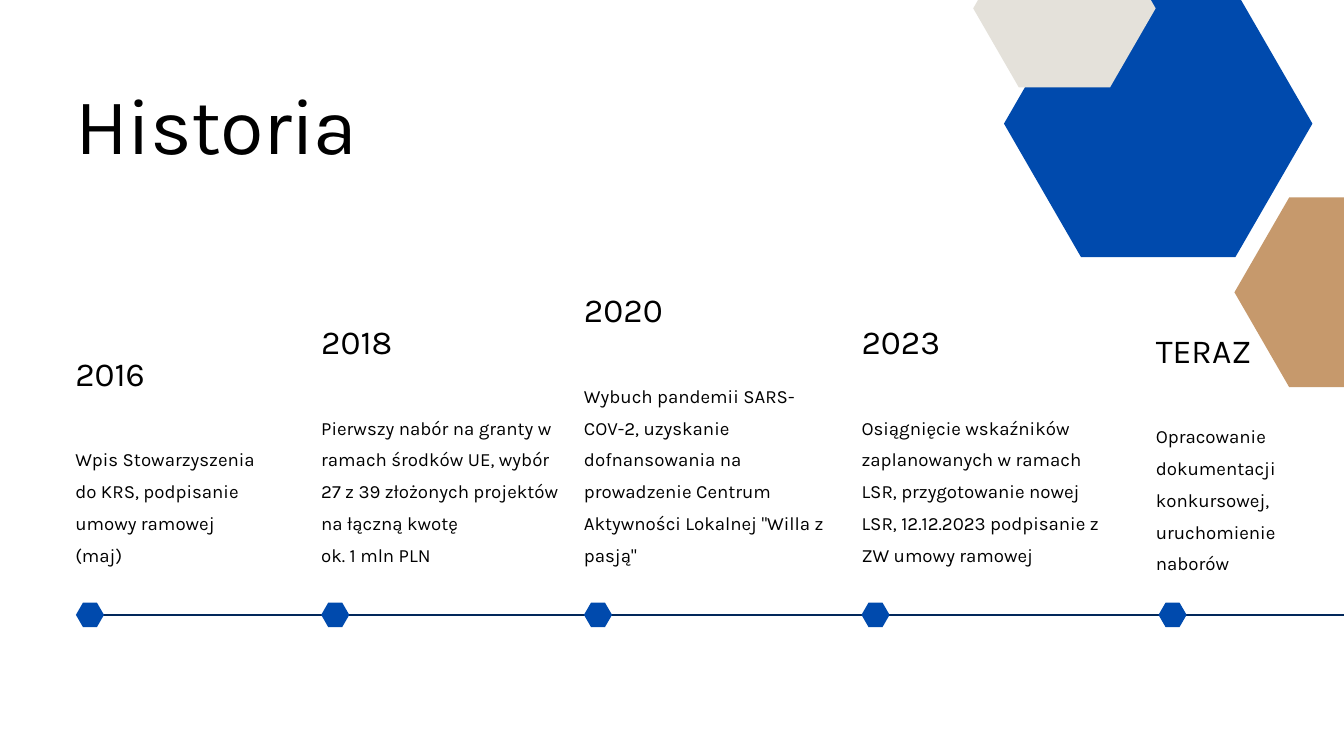
import math
from dataclasses import dataclass

import pptx
import pptx.dml.color
import pptx.enum.shapes
import pptx.enum.text
import pptx.oxml.ns
import pptx.util
from lxml import etree


@dataclass(frozen=True)
class Theme:
    """Colours, font and type sizes of the deck."""
    ink: str = "000000"
    blue: str = "004AAD"
    navy: str = "02285B"
    tan: str = "C6996C"
    stone: str = "E4E1DA"
    font: str = "Karla"
    title: int = 85
    year: int = 36
    body: int = 20
    title_line: float = 102
    year_line: float = 43.2
    body_line: float = 34


THEME = Theme()
CELL = pptx.util.Inches(0.1)
COLUMNS, ROWS = 200, 112.5
MARGIN = 11.2
AXIS_ROW = 91.5
TEXT_FOOT = 84.2
YEAR_RISE = 12.8
LINE_ROWS = THEME.body_line / 7.2
MARKER = 4.18

MILESTONES = [
    (11.2, 26.8, 4, 0, 0.1, "2016",
     ["Wpis Stowarzyszenia do KRS, podpisanie umowy ramowej (maj)"]),
    (47.8, 36.8, 5, 0, 0, "2018",
     ["Pierwszy nabór na granty w ramach środków UE, wybór 27 z 39 złożonych projektów na łączną kwotę",
      "ok. 1 mln PLN"]),
    (86.9, 36.8, 6, 0, 0, "2020",
     ["Wybuch pandemii SARS-COV-2, uzyskanie dofnansowania na prowadzenie Centrum Aktywności Lokalnej \"Willa z pasją\""]),
    (128.2, 36.8, 5, 0, 0, "2023",
     ["Osiągnięcie wskaźników zaplanowanych w ramach LSR, przygotowanie nowej LSR, 12.12.2023 podpisanie z ZW umowy ramowej"]),
    (172, 23.4, 5, 1.3, 0.4, "TERAZ",
     ["Opracowanie dokumentacji konkursowej, uruchomienie naborów"]),
]

HEXAGONS = [
    (200, 43.5, 32.6, THEME.tan),
    (172.35, 18.4, 45.9, THEME.blue),
    (158.4, 1.25, 27.15, THEME.stone),
]


def cells(count):
    """Turn grid cells into a length."""
    return pptx.util.Emu(round(count * CELL))


def colour(code):
    """Return the colour for a hex code."""
    return pptx.dml.color.RGBColor.from_string(code)


def write(box, paragraphs, size, line):
    """Fill a box with left-aligned paragraphs and return their runs."""
    frame = box.text_frame
    frame.word_wrap = True
    frame.auto_size = pptx.enum.text.MSO_AUTO_SIZE.NONE
    frame.vertical_anchor = pptx.enum.text.MSO_ANCHOR.TOP
    frame.margin_left = frame.margin_right = 0
    frame.margin_top = frame.margin_bottom = 0
    spans = []
    for index, words in enumerate(paragraphs):
        para = frame.add_paragraph() if index else frame.paragraphs[0]
        para.alignment = pptx.enum.text.PP_ALIGN.LEFT
        para.line_spacing = pptx.util.Pt(line)
        para.space_before = pptx.util.Pt(0)
        span = para.add_run()
        span.text = words
        span.font.name = THEME.font
        span.font.size = pptx.util.Pt(size)
        span.font.color.rgb = colour(THEME.ink)
        spans.append(span)
    return spans


def add_title(page, words):
    """Place and fill the title placeholder."""
    title = page.shapes.title
    title.left, title.top = cells(MARGIN), cells(MARGIN)
    title.width, title.height = cells(62.3), cells(14.1)
    for span in write(title, [words], THEME.title, THEME.title_line):
        span.font._element.set("spc", "-80")


def add_text(page, left, top, width, height, paragraphs, size, line):
    """Add a text box measured in grid cells."""
    box = page.shapes.add_textbox(cells(left), cells(top), cells(width), cells(height))
    write(box, paragraphs, size, line)


def add_hexagon(page, centre_x, centre_y, width, fill):
    """Draw a regular hexagon around a centre."""
    radius = width / 2
    corners = [
        (cells(centre_x + radius * math.cos(step * math.pi / 3)),
         cells(centre_y + radius * math.sin(step * math.pi / 3)))
        for step in range(6)
    ]
    builder = page.shapes.build_freeform(*corners[0])
    builder.add_line_segments(corners[1:], close=True)
    hexagon = builder.convert_to_shape()
    hexagon.shadow.inherit = False
    hexagon.fill.solid()
    hexagon.fill.fore_color.rgb = colour(fill)
    hexagon.line.fill.background()


def add_axis(page):
    """Draw the timeline from the first marker to the slide edge."""
    axis = page.shapes.add_connector(
        pptx.enum.shapes.MSO_CONNECTOR.STRAIGHT,
        cells(13.9), cells(AXIS_ROW), cells(COLUMNS), cells(AXIS_ROW))
    axis.line.color.rgb = colour(THEME.navy)
    axis.line.width = pptx.util.Pt(1.5)
    etree.SubElement(axis._element.spPr, pptx.oxml.ns.qn("a:effectLst"))


def add_milestone(page, left, width, lines, drop, marker_shift, year, paragraphs):
    """Add a year, its description and its marker on the axis."""
    top = TEXT_FOOT + drop - lines * LINE_ROWS
    add_text(page, left, top - YEAR_RISE, width, 6, [year], THEME.year, THEME.year_line)
    add_text(page, left, top, width, lines * LINE_ROWS - 0.8, paragraphs,
             THEME.body, THEME.body_line)
    add_hexagon(page, left + marker_shift + MARKER / 2, AXIS_ROW, MARKER, THEME.blue)


def main():
    """Build the history slide."""
    deck = pptx.Presentation()
    deck.slide_width, deck.slide_height = cells(COLUMNS), cells(ROWS)
    page = deck.slides.add_slide(deck.slide_layouts.get_by_name("Title Only"))
    add_title(page, "Historia")
    add_axis(page)
    for hexagon in HEXAGONS:
        add_hexagon(page, *hexagon)
    for milestone in MILESTONES:
        add_milestone(page, *milestone)
    deck.save("out.pptx")


if __name__ == "__main__":
    main()
